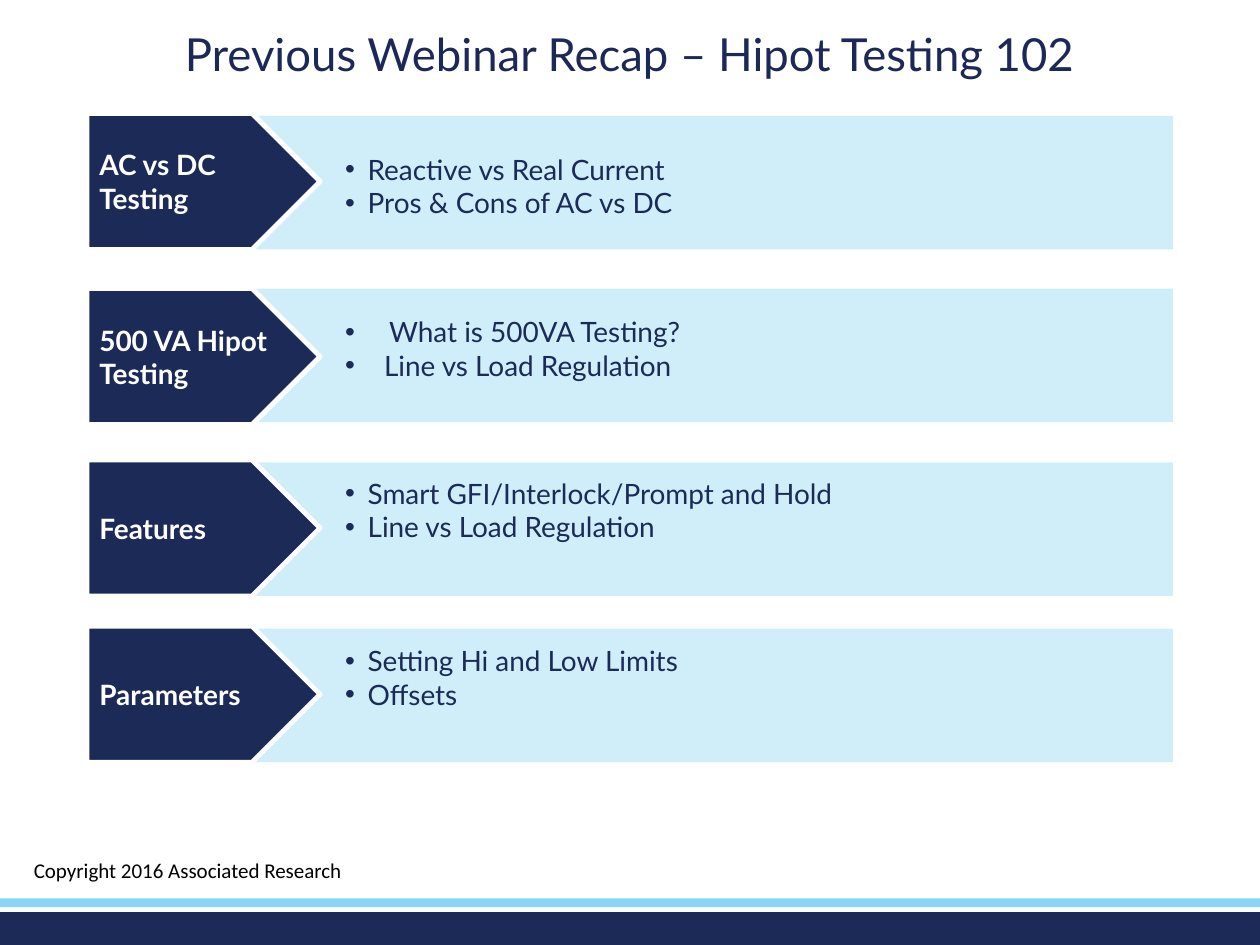
"""Build the webinar recap slide with four labelled topic rows."""
from dataclasses import dataclass

from lxml import etree
from pptx import Presentation
from pptx import util as u
from pptx.dml import color
from pptx.enum import shapes, text
from pptx.oxml import ns

PX = 9144


@dataclass(frozen=True)
class Theme:
    navy: str = "1C2A58"
    title: str = "1C2958"
    sky: str = "88D6F4"
    white: str = "FFFFFF"
    black: str = "000000"
    font: str = "Lato"
    footer_font: str = "Calibri"
    title_size: int = 26
    body_size: int = 16
    footer_size: int = 12
    outline: float = 2.75


@dataclass(frozen=True)
class Topic:
    label: tuple
    bullets: tuple
    band_top: int
    arrow_top: int
    text_top: int
    indents: tuple = (18, 18)


TOPICS = (
    Topic(("AC vs DC", "Testing"),
          ("Reactive vs Real Current", "Pros & Cons of AC vs DC"), 92, 90, 116),
    Topic(("500 VA Hipot", "Testing"),
          ("What is 500VA Testing?", "Line vs Load Regulation"), 229, 229, 245, (35, 31)),
    Topic(("Features",),
          ("Smart GFI/Interlock/Prompt and Hold", "Line vs Load Regulation"), 367, 365, 373),
    Topic(("Parameters",),
          ("Setting Hi and Low Limits", "Offsets"), 499, 497, 506),
)


class SlideBuilder:
    """Draw styled elements on the current slide."""

    def __init__(self, slide, theme):
        self.slide = slide
        self.theme = theme

    def box(self, *place):
        return [u.Emu(value * PX) for value in place]

    def style(self, paragraph, size, fill, name=None, bold=False):
        font = paragraph.font
        font.size, font.bold = u.Pt(size), bold
        font.name = name or self.theme.font
        font.color.rgb = color.RGBColor.from_string(fill)

    def add_lines(self, frame, lines, size, fill, name=None, bold=False, indents=()):
        frame.word_wrap = True
        for index, line in enumerate(lines):
            paragraph = frame.add_paragraph() if index else frame.paragraphs[0]
            paragraph.text = line
            paragraph.alignment = text.PP_ALIGN.LEFT
            if indents:
                self.bullet(paragraph, indents[index])
            self.style(paragraph, size, fill, name, bold)

    def bullet(self, paragraph, indent):
        properties = paragraph._p.get_or_add_pPr()
        properties.set("marL", str(indent * PX))
        properties.set("indent", str(-indent * PX))
        etree.SubElement(properties, ns.qn("a:buFont"), typeface="Arial")
        etree.SubElement(properties, ns.qn("a:buChar"), char="•")

    def shape(self, kind, place, fill, opacity=100):
        shape = self.slide.shapes.add_shape(kind, *self.box(*place))
        shape.shadow.inherit = False
        shape.fill.solid()
        shape.fill.fore_color.rgb = color.RGBColor.from_string(fill)
        shape.line.fill.background()
        if opacity < 100:
            value = shape._element.spPr.find(".//" + ns.qn("a:srgbClr"))
            etree.SubElement(value, ns.qn("a:alpha"), val=str(opacity * 1000))
        return shape

    def bar(self, place, fill, opacity=100):
        self.shape(shapes.MSO_SHAPE.RECTANGLE, place, fill, opacity)

    def arrow(self, place, lines):
        shape = self.shape(shapes.MSO_SHAPE.PENTAGON, place, self.theme.navy)
        shape.line.color.rgb = color.RGBColor.from_string(self.theme.white)
        shape.line.width = u.Pt(self.theme.outline)
        shape.text_frame.vertical_anchor = text.MSO_ANCHOR.MIDDLE
        self.add_lines(shape.text_frame, lines, self.theme.body_size, self.theme.white, bold=True)

    def text_box(self, place, lines, size, fill, name=None, indents=()):
        shape = self.slide.shapes.add_textbox(*self.box(*place))
        self.add_lines(shape.text_frame, lines, size, fill, name, indents=indents)

    def title(self, place, line):
        shape = self.slide.shapes.title
        shape.left, shape.top, shape.width, shape.height = self.box(*place)
        frame = shape.text_frame
        frame.text = line
        frame.auto_size = text.MSO_AUTO_SIZE.NONE
        frame.vertical_anchor = text.MSO_ANCHOR.MIDDLE
        paragraph = frame.paragraphs[0]
        paragraph.alignment = text.PP_ALIGN.CENTER
        paragraph.line_spacing = 0.9
        self.style(paragraph, self.theme.title_size, self.theme.title)


def main():
    presentation = Presentation()
    presentation.slide_width, presentation.slide_height = u.Emu(1000 * PX), u.Emu(750 * PX)
    theme = Theme()
    builder = SlideBuilder(presentation.slides.add_slide(presentation.slide_layouts[5]), theme)

    builder.title((0, 16, 1000, 58), "Previous Webinar Recap – Hipot Testing 102")
    builder.bar((0, 724, 1000, 26), theme.navy)
    builder.bar((0, 713, 1000, 7), theme.sky)
    builder.text_box((17, 676, 317, 40), ("Copyright 2016 Associated Research",),
                     theme.footer_size, theme.black, theme.footer_font)
    for topic in TOPICS:
        builder.bar((187, topic.band_top, 744, 106), theme.sky, 40)
        builder.arrow((69, topic.arrow_top, 185, 108), topic.label)
        builder.text_box((264, topic.text_top, 657, 91), topic.bullets,
                         theme.body_size, theme.navy, indents=topic.indents)

    presentation.save("out.pptx")


if __name__ == "__main__":
    main()
